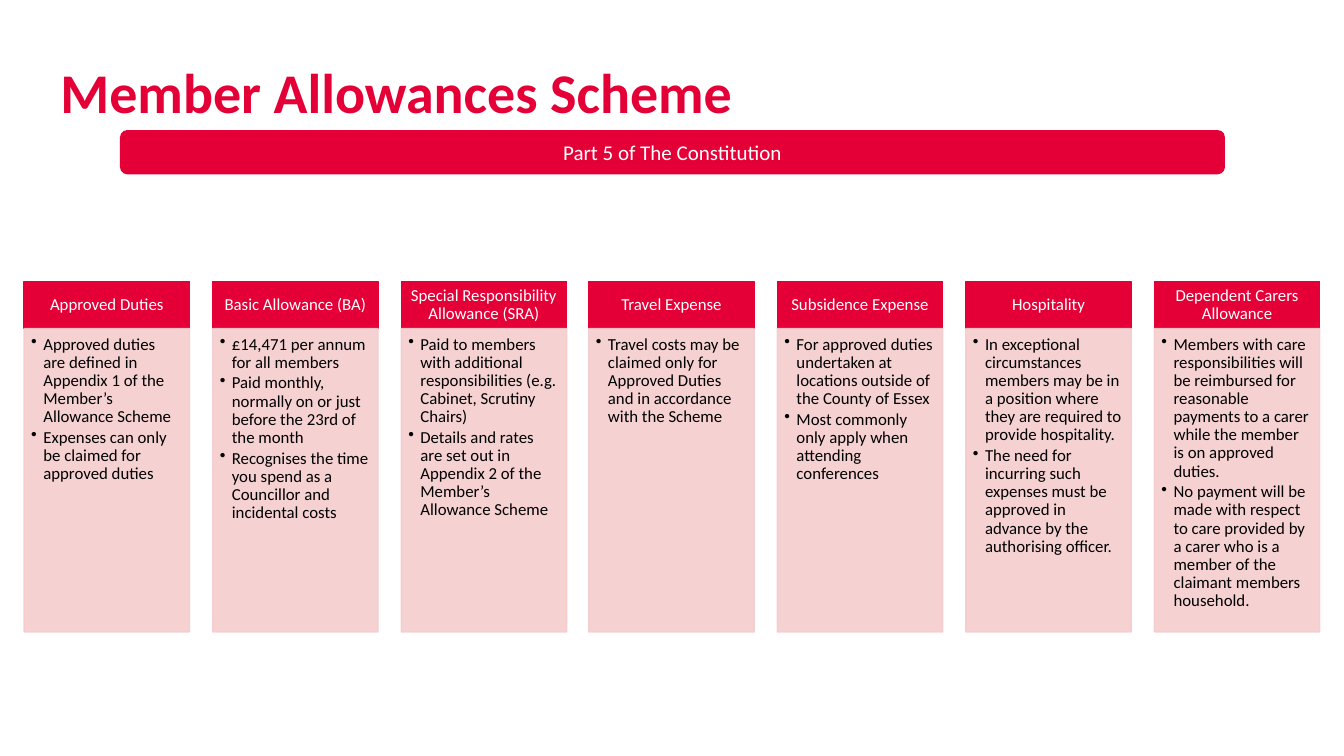
from dataclasses import dataclass

from lxml import etree
from pptx import Presentation
from pptx import util as u
from pptx.dml.color import RGBColor
from pptx.enum import shapes, text
from pptx.oxml.ns import qn

TITLE = "Member Allowances Scheme"
BANNER = "Part 5 of The Constitution"
ALLOWANCES = [
    ("Approved Duties", [
        "Approved duties are defined in Appendix 1 of the Member’s Allowance Scheme",
        "Expenses can only be claimed for approved duties",
    ]),
    ("Basic Allowance (BA)", [
        "£14,471 per annum for all members",
        "Paid monthly, normally on or just before the 23rd of the month",
        "Recognises the time you spend as a Councillor and incidental costs",
    ]),
    ("Special Responsibility Allowance (SRA)", [
        "Paid to members with additional responsibilities (e.g. Cabinet, Scrutiny Chairs)",
        "Details and rates are set out in Appendix 2 of the Member’s Allowance Scheme",
    ]),
    ("Travel Expense", [
        "Travel costs may be claimed only for Approved Duties and in accordance with the Scheme",
    ]),
    ("Subsidence Expense", [
        "For approved duties undertaken at locations outside of the County of Essex",
        "Most commonly only apply when attending conferences",
    ]),
    ("Hospitality", [
        "In exceptional circumstances members may be in a position where they are "
        "required to provide hospitality.",
        "The need for incurring such expenses must be approved in advance by the "
        "authorising officer.",
    ]),
    ("Dependent Carers Allowance", [
        "Members with care responsibilities will be reimbursed for reasonable payments "
        "to a carer while the member is on approved duties.",
        "No payment will be made with respect to care provided by a carer who is a "
        "member of the claimant members household.",
    ]),
]


@dataclass(frozen=True)
class Theme:
    font: str = "Calibri"
    red: str = "E40037"
    pink: str = "F5CCCE"
    white: str = "FFFFFF"
    black: str = "000000"
    title: int = 40
    banner: int = 15
    body: int = 12
    pink_opacity: int = 90


THEME = Theme()
SCALE = 9144  # EMU per px, 100 px to the inch
FIRST_LEFT, LAST_LEFT, COLUMN_WIDTH = 24, 1145, 164
HEADER_TOP, HEADER_HEIGHT, BODY_HEIGHT = 279, 47, 301
BULLET_INDENT = 12


def px(n):
    return u.Emu(n * SCALE)


def set_frame(tf, insets, anchor):
    tf.word_wrap = True
    tf.vertical_anchor = anchor
    tf.margin_left, tf.margin_top, tf.margin_right, tf.margin_bottom = map(px, insets)


def style(p, size, color, bold=False, align=text.PP_ALIGN.LEFT):
    p.alignment = align
    for r in p.runs:
        r.font.name, r.font.size, r.font.bold = THEME.font, u.Pt(size), bold
        r.font.color.rgb = RGBColor.from_string(color)


def add_box(slide, kind, box, color, line=True):
    sp = slide.shapes.add_shape(kind, *map(px, box))
    sp.shadow.inherit = False
    sp.fill.solid()
    sp.fill.fore_color.rgb = RGBColor.from_string(color)
    if line:
        sp.line.color.rgb = RGBColor.from_string(color)
        sp.line.width = u.Pt(1)
    else:
        sp.line.fill.background()
    return sp


def set_opacity(sp, percent):
    """Apply the opacity to both fill and outline."""
    for color in sp._element.spPr.iter(qn("a:srgbClr")):
        etree.SubElement(color, qn("a:alpha"), val=str(percent * 1000))


def add_bullet(p):
    pPr = p._p.get_or_add_pPr()
    pPr.set("marL", str(px(BULLET_INDENT)))
    pPr.set("indent", str(px(-BULLET_INDENT)))
    etree.SubElement(pPr, qn("a:buChar"), char="•")


def add_column(slide, left, heading, points):
    rect = shapes.MSO_SHAPE.RECTANGLE
    header = add_box(slide, rect, (left, HEADER_TOP, COLUMN_WIDTH, HEADER_HEIGHT), THEME.red)
    set_frame(header.text_frame, (9, 5, 9, 5), text.MSO_ANCHOR.MIDDLE)
    header.text_frame.text = heading
    p = header.text_frame.paragraphs[0]
    p.line_spacing = 0.9
    style(p, THEME.body, THEME.white, align=text.PP_ALIGN.CENTER)

    body = add_box(slide, rect, (left, HEADER_TOP + HEADER_HEIGHT, COLUMN_WIDTH, BODY_HEIGHT),
                   THEME.pink)
    set_opacity(body, THEME.pink_opacity)
    tf = body.text_frame
    set_frame(tf, (7, 7, 9, 10), text.MSO_ANCHOR.TOP)
    tf.text = "\n".join(points)
    for p in tf.paragraphs:
        add_bullet(p)
        p.line_spacing, p.space_after = 0.9, u.Pt(1.8)
        style(p, THEME.body, THEME.black)


def main():
    prs = Presentation()
    prs.slide_width, prs.slide_height = px(1333), px(750)
    slide = prs.slides.add_slide(prs.slide_layouts[6])

    title = slide.shapes.add_textbox(*map(px, (60, 57, 810, 116)))
    set_frame(title.text_frame, (0, 0, 0, 0), text.MSO_ANCHOR.TOP)
    title.text_frame.text = TITLE
    style(title.text_frame.paragraphs[0], THEME.title, THEME.red, bold=True)

    pitch = (LAST_LEFT - FIRST_LEFT) / (len(ALLOWANCES) - 1)
    for i, (heading, points) in enumerate(ALLOWANCES):
        add_column(slide, round(FIRST_LEFT + i * pitch), heading, points)

    banner = add_box(slide, shapes.MSO_SHAPE.ROUNDED_RECTANGLE, (119, 129, 1096, 44),
                     THEME.red, line=False)
    set_frame(banner.text_frame, (0, 0, 0, 0), text.MSO_ANCHOR.MIDDLE)
    banner.text_frame.text = BANNER
    style(banner.text_frame.paragraphs[0], THEME.banner, THEME.white,
          align=text.PP_ALIGN.CENTER)

    prs.save("out.pptx")


if __name__ == "__main__":
    main()
